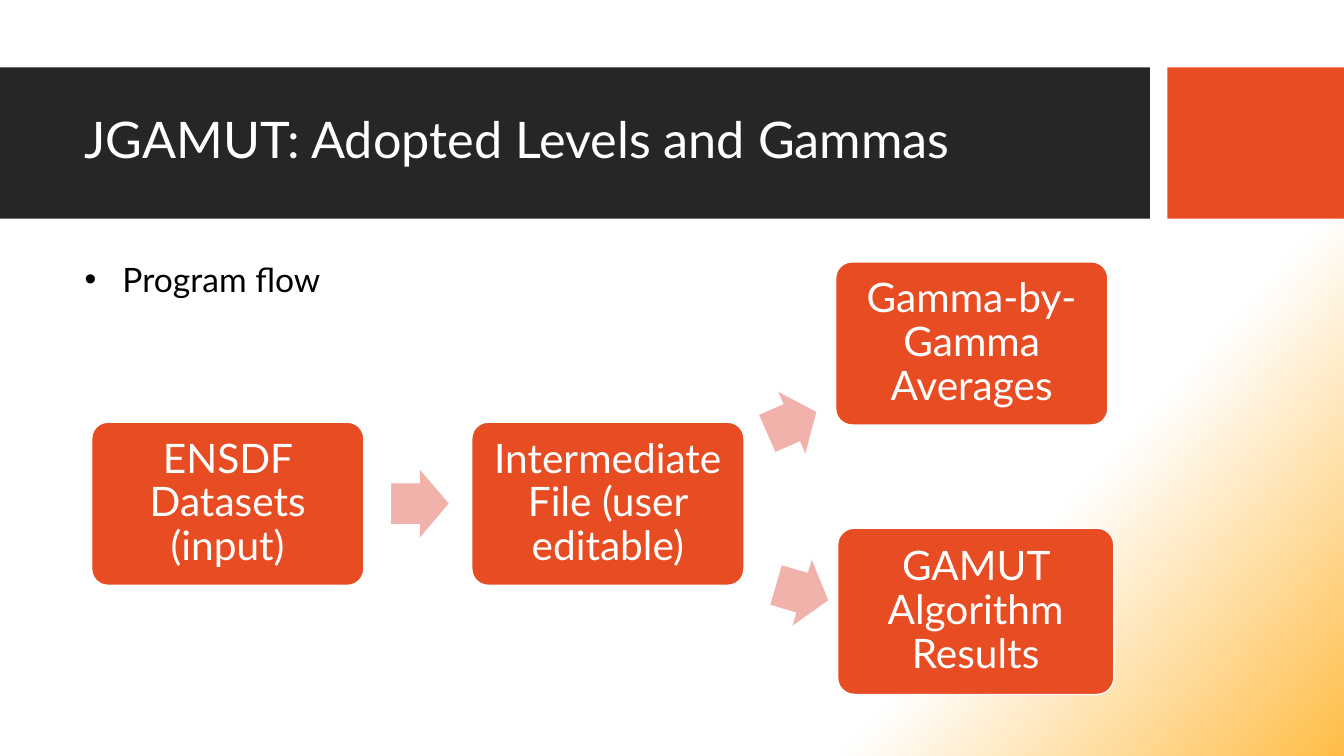
from lxml.etree import SubElement
from pptx import Presentation
from pptx.dml.color import RGBColor
from pptx.enum.shapes import MSO_SHAPE
from pptx.enum.text import MSO_ANCHOR, MSO_AUTO_SIZE, PP_ALIGN
from pptx.oxml.ns import qn
from pptx.util import Cm, Pt

WIDTH, HEIGHT = 33.87, 19.05
WHITE, BLACK, CHARCOAL = "FFFFFF", "000000", "262626"
ORANGE, PINK, AMBER = "E84C22", "F2B2AC", "FFBD47"
FONT = "Lato"
INSET = 0.3

# Offsets, widths and heights in cm from the corner of the flow diagram
STEPS = [
    ("ENSDF Datasets (input)", 0, 4.04, 6.86, 4.11),
    ("Intermediate File (user editable)", 9.58, 4.04, 6.86, 4.11),
    ("Gamma-by-Gamma Averages", 18.75, 0, 6.86, 4.11),
    ("GAMUT Algorithm Results", 18.8, 6.71, 6.96, 4.19),
]
ARROWS = [
    (7.55, 5.24, 1.45, 1.7, 0),
    (16.97, 3.2, 1.35, 1.7, 336.3),
    (17.22, 7.47, 1.37, 1.73, 16.2),
]


def color(hex_value):
    return RGBColor.from_string(hex_value)


def set_all(target, values):
    for name, value in values.items():
        setattr(target, name, value)


def place(shape, left, top, width, height):
    set_all(shape, {"left": Cm(left), "top": Cm(top),
                    "width": Cm(width), "height": Cm(height)})


def add_block(slide, kind, box, fill):
    """Add a flat preset shape without outline or shadow."""
    block = slide.shapes.add_shape(kind, *map(Cm, box))
    block.shadow.inherit = False
    block.fill.solid()
    block.fill.fore_color.rgb = color(fill)
    block.line.fill.background()
    return block


def write(shape, text, size, ink, align, anchor, line_spacing=0.9):
    frame = shape.text_frame
    set_all(frame, {"text": text, "word_wrap": True,
                    "auto_size": MSO_AUTO_SIZE.NONE, "vertical_anchor": anchor})
    paragraph = frame.paragraphs[0]
    set_all(paragraph, {"alignment": align, "line_spacing": line_spacing,
                        "space_before": Pt(0)})
    font = paragraph.runs[0].font
    set_all(font, {"name": FONT, "size": Pt(size)})
    font.color.rgb = color(ink)


def paint_background(slide):
    fill = slide.background.fill
    fill.gradient()
    fill.gradient_angle = 318
    for stop, (position, tint) in zip(fill.gradient_stops,
                                      [(0.75, WHITE), (1, AMBER)]):
        stop.position = position
        stop.color.rgb = color(tint)


def build_header(slide, left, top, width, height):
    """Lay the dark band and the accent block behind the title."""
    band_width, accent_width = 28.98, 4.45
    accent_left = left + width - accent_width
    blocks = [((left, top, band_width, height), CHARCOAL),
              ((accent_left, top, accent_width, height), ORANGE)]
    for order, (box, fill) in enumerate(blocks):
        block = add_block(slide, MSO_SHAPE.RECTANGLE, box, fill)
        slide.shapes._spTree.insert(2 + order, block._element)

    title = slide.shapes.title
    place(title, left + 1.88, top + 0.38, 26.7, 3)
    write(title, "JGAMUT: Adopted Levels and Gammas", 36, WHITE,
          PP_ALIGN.LEFT, MSO_ANCHOR.MIDDLE)


def build_body(slide, left, top, width, height):
    body = slide.placeholders[1]
    place(body, left, top, width, height)
    properties = body.text_frame.paragraphs[0]._p.get_or_add_pPr()
    properties.set("marL", str(Cm(0.64)))
    properties.set("indent", str(-Cm(0.64)))
    SubElement(properties, qn("a:buFont"), typeface="Arial")
    SubElement(properties, qn("a:buChar"), char="•")
    write(body, "Program flow", 24, BLACK, PP_ALIGN.LEFT, MSO_ANCHOR.TOP)


def build_flow(slide, left, top):
    for text, dx, dy, width, height in STEPS:
        step = add_block(slide, MSO_SHAPE.ROUNDED_RECTANGLE,
                         (left + dx, top + dy, width, height), ORANGE)
        step.adjustments[0] = 0.1
        step.line.color.rgb = color(WHITE)
        step.line.width = Pt(1)
        for side in ("left", "top", "right", "bottom"):
            setattr(step.text_frame, f"margin_{side}", Cm(INSET))
        write(step, text, 29, WHITE, PP_ALIGN.CENTER, MSO_ANCHOR.MIDDLE)

    for dx, dy, width, height, angle in ARROWS:
        arrow = add_block(slide, MSO_SHAPE.RIGHT_ARROW,
                          (left + dx, top + dy, width, height), PINK)
        arrow.adjustments[0] = 0.6
        arrow.adjustments[1] = 0.5
        arrow.rotation = angle


def main():
    deck = Presentation()
    set_all(deck, {"slide_width": Cm(WIDTH), "slide_height": Cm(HEIGHT)})
    slide = deck.slides.add_slide(deck.slide_layouts[1])
    paint_background(slide)
    build_header(slide, 0, 1.7, WIDTH, 3.81)
    build_body(slide, 1.88, 6.5, 26.7, 10)
    build_flow(slide, 2.31, 6.6)
    deck.save("out.pptx")


if __name__ == "__main__":
    main()
